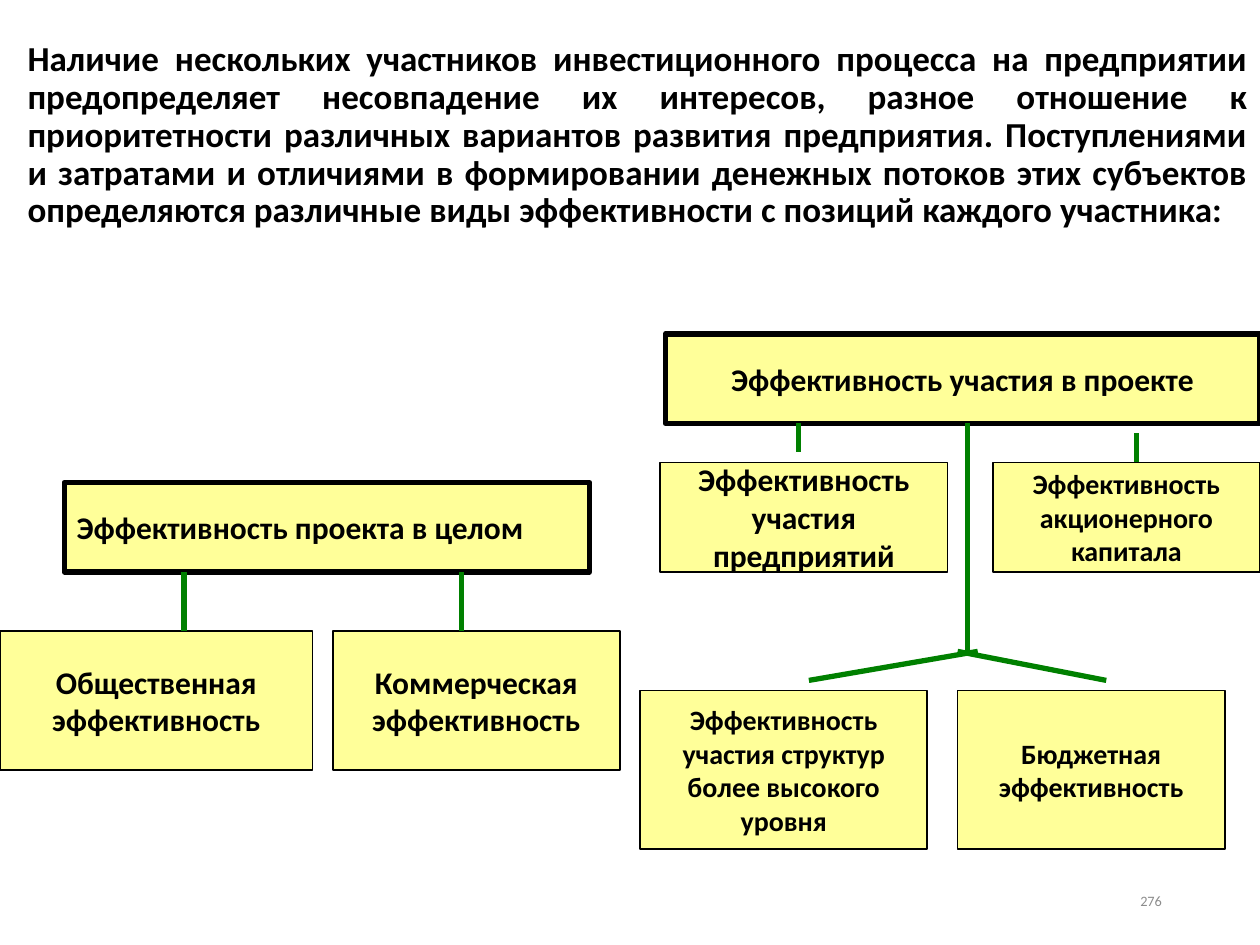
from lxml import etree
from pptx import Presentation
from pptx.dml.color import RGBColor
from pptx.enum.shapes import MSO_CONNECTOR, MSO_SHAPE
from pptx.enum.text import MSO_ANCHOR, PP_ALIGN
from pptx.oxml.ns import qn
from pptx.util import Inches, Pt

BLACK = RGBColor(0, 0, 0)
YELLOW = RGBColor(0xFF, 0xFF, 0x99)
GREEN = RGBColor(0, 0x80, 0)
GRAY = RGBColor(0x8C, 0x8C, 0x8C)
LEFT, MID, RIGHT, FULL = (PP_ALIGN.LEFT, PP_ALIGN.CENTER,
                          PP_ALIGN.RIGHT, PP_ALIGN.JUSTIFY)
TOP, CENTER = MSO_ANCHOR.TOP, MSO_ANCHOR.MIDDLE
RECT, LINE = MSO_SHAPE.RECTANGLE, MSO_CONNECTOR.STRAIGHT

INTRO = ("Наличие нескольких участников инвестиционного процесса на предприятии "
         "предопределяет несовпадение их интересов, разное отношение к "
         "приоритетности различных вариантов развития предприятия. "
         "Поступлениями и затратами и отличиями в формировании денежных потоков "
         "этих субъектов определяются различные виды эффективности с позиций "
         "каждого участника:")
PAGE = "276"

# Each row: top, height, border, boxes of (left, width, size, align, text)
ROWS = [
    (3.83, 0.71, 3, [(0.51, 4.17, 18, LEFT, "Эффективность проекта в целом")]),
    (2.65, 0.71, 3, [(5.28, 4.72, 18, MID, "Эффективность участия в проекте")]),
    (5.01, 1.1, 1, [(0, 2.48, 18, MID, "Общественная эффективность"),
                    (2.64, 2.28, 18, MID, "Коммерческая эффективность")]),
    (3.67, 0.87, 1, [(5.24, 2.28, 18, MID, "Эффективность участия предприятий"),
                     (7.88, 2.12, 16, MID, "Эффективность акционерного капитала")]),
    (5.48, 1.26, 1, [(5.08, 2.28, 16, MID,
                      "Эффективность участия структур более высокого уровня"),
                     (7.6, 2.12, 16, MID, "Бюджетная эффективность")]),
]

# x1, y1, x2, y2
LINKS = [
    (1.46, 4.54, 1.46, 5.01), (3.66, 4.54, 3.66, 5.01),
    (6.34, 3.36, 6.34, 3.59), (9.02, 3.44, 9.02, 3.67),
    (7.68, 3.36, 7.68, 5.17), (7.6, 5.17, 8.78, 5.4), (7.76, 5.17, 6.42, 5.4),
]


def write(shape, text, size, align, anchor=CENTER, color=BLACK, bold=True):
    frame = shape.text_frame
    frame.word_wrap = True
    frame.vertical_anchor = anchor
    para = frame.paragraphs[0]
    para.alignment = align
    run = para.add_run()
    run.text = text
    style = {"name": "Calibri", "size": Pt(size), "bold": bold}
    for key, value in style.items():
        setattr(run.font, key, value)
    run.font.color.rgb = color
    return para


def add_box(slide, area, border):
    box = slide.shapes.add_shape(RECT, *map(Inches, area))
    box.shadow.inherit = False
    box.fill.solid()
    box.fill.fore_color.rgb = YELLOW
    box.line.color.rgb = BLACK
    box.line.width = Pt(border)
    return box


def add_link(slide, ends):
    link = slide.shapes.add_connector(LINE, *map(Inches, ends))
    link.line.color.rgb = GREEN
    link.line.width = Pt(3)
    etree.SubElement(link._element.spPr, qn("a:effectLst"))


def main():
    deck = Presentation()
    deck.slide_width, deck.slide_height = Inches(10), Inches(7.5)
    slide = deck.slides.add_slide(deck.slide_layouts[6])

    intro = slide.shapes.add_textbox(*map(Inches, (0.12, 0.28, 9.88, 7.22)))
    write(intro, INTRO, 20, FULL, TOP).line_spacing = 0.9

    for top, height, border, boxes in ROWS:
        for left, width, size, align, text in boxes:
            box = add_box(slide, (left, top, width, height), border)
            write(box, text, size, align)

    for ends in LINKS:
        add_link(slide, ends)

    page = slide.shapes.add_textbox(*map(Inches, (7.07, 6.95, 2.25, 0.4)))
    write(page, PAGE, 8.2, RIGHT, color=GRAY, bold=False)
    deck.save("out.pptx")


if __name__ == "__main__":
    main()
